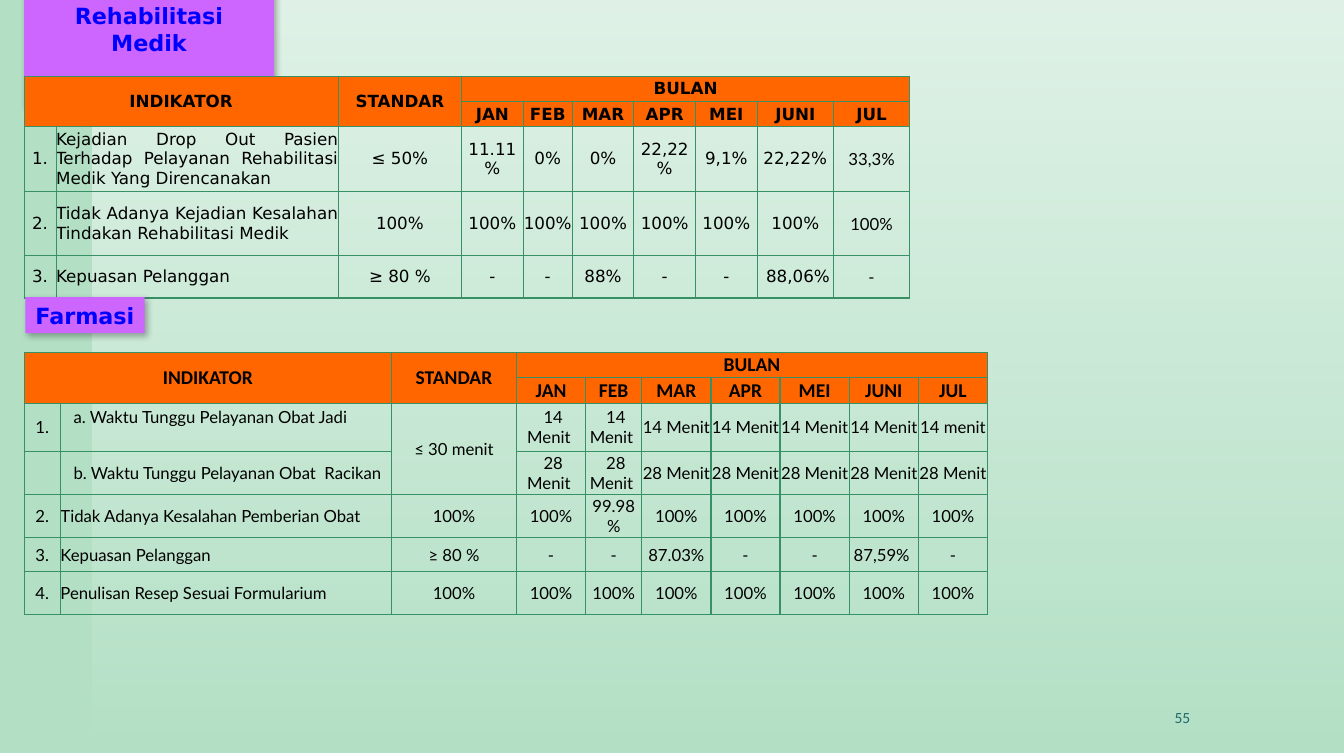
from dataclasses import dataclass

from pptx import Presentation
from pptx.dml.color import RGBColor
from pptx.enum.shapes import MSO_SHAPE
from pptx.enum.text import MSO_ANCHOR, MSO_AUTO_SIZE, PP_ALIGN
from pptx.oxml import parse_xml
from pptx.oxml.ns import nsdecls, qn
from pptx.util import Cm, Pt

RECTANGLE = MSO_SHAPE.RECTANGLE
MIDDLE = MSO_ANCHOR.MIDDLE
GROW = MSO_AUTO_SIZE.SHAPE_TO_FIT_TEXT
LEFT, CENTER, RIGHT, JUSTIFY = PP_ALIGN.LEFT, PP_ALIGN.CENTER, PP_ALIGN.RIGHT, PP_ALIGN.JUSTIFY


@dataclass(frozen=True)
class Theme:
    background: str = "B3E0C5"
    veil: str = "FFFFFF"
    label: str = "CC66FF"
    label_text: str = "0000FF"
    header: str = "FF6600"
    text: str = "000000"
    border: str = "389066"
    number: str = "1F696F"
    wide_font: str = "DejaVu Sans"
    header_font: str = "Calibri"
    body_font: str = "Lato"
    label_size: float = 16
    header_size: float = 14
    body_size: float = 12
    number_size: float = 11.1


THEME = Theme()
MONTHS = ["JAN", "FEB", "MAR", "APR", "MEI", "JUNI", "JUL"]
HEADER = [
    ["INDIKATOR", "", "STANDAR", "BULAN"] + [""] * 6,
    ["", "", ""] + MONTHS,
]
ALL_MET = ["100%"] * 7

REHABILITATION = [
    ["1.", "Kejadian Drop Out Pasien Terhadap Pelayanan Rehabilitasi Medik Yang Direncanakan",
     "≤ 50%", "11.11%", "0%", "0%", "22,22%", "9,1%", "22,22%", "33,3%"],
    ["2.", "Tidak Adanya Kejadian Kesalahan Tindakan Rehabilitasi Medik", "100%"] + ALL_MET,
    ["3.", "Kepuasan Pelanggan", "≥ 80 %", "-", "-", "88%", "-", "-", " 88,06%", "-"],
]
PHARMACY = [
    ["1.", "a. Waktu Tunggu Pelayanan Obat Jadi", "≤ 30 menit"]
    + [" 14 Menit "] * 2 + ["14 Menit"] * 4 + ["14 menit"],
    ["", "b. Waktu Tunggu Pelayanan Obat  Racikan", ""] + [" 28 Menit "] * 2 + ["28 Menit"] * 5,
    ["2.", "Tidak Adanya Kesalahan Pemberian Obat", "100%", "100%", "99.98%"] + ["100%"] * 5,
    ["3.", "Kepuasan Pelanggan", "≥ 80 %", "-", "-", "87.03%", "-", "-", "87,59% ", "-"],
    ["4.", "Penulisan Resep Sesuai Formularium", "100%"] + ALL_MET,
]


def color(value):
    return RGBColor.from_string(value)


def place(shape, left, top, width, height):
    shape.left, shape.top, shape.width, shape.height = Cm(left), Cm(top), Cm(width), Cm(height)


def write(frame, text, font, size, ink, bold=False, align=CENTER):
    frame.text = text
    para = frame.paragraphs[0]
    para.alignment = align
    for span in para.runs:
        span.font.name, span.font.size, span.font.bold = font, Pt(size), bold
        span.font.color.rgb = color(ink)


def add_veil(slide, left, top, width, height):
    """White gradient that fades out downwards, behind everything else."""
    veil = slide.shapes.add_shape(RECTANGLE, Cm(left), Cm(top), Cm(width), Cm(height))
    veil.shadow.inherit = False
    veil.line.fill.background()
    veil.fill.background()
    stops = "".join(
        f'<a:gs pos="{position}"><a:srgbClr val="{THEME.veil}"><a:alpha val="{alpha}"/></a:srgbClr></a:gs>'
        for position, alpha in ((0, 60000), (100000, 0)))
    gradient = parse_xml(f'<a:gradFill {nsdecls("a")}><a:gsLst>{stops}</a:gsLst>'
                         '<a:lin ang="5400000" scaled="0"/></a:gradFill>')
    properties = veil._element.spPr
    properties.replace(properties.find(qn("a:noFill")), gradient)
    slide.shapes._spTree.insert(2, veil._element)


def format_label(label, text, left, top, width, height):
    """Purple section label with a soft shadow."""
    place(label, left, top, width, height)
    label.fill.solid()
    label.fill.fore_color.rgb = color(THEME.label)
    label.line.fill.background()
    label.shadow.inherit = False
    label._element.spPr.find(qn("a:effectLst")).append(parse_xml(
        f'<a:outerShdw {nsdecls("a")} blurRad="{Pt(4.5)}" dist="{Pt(2.6)}" dir="{53 * 60000}" '
        'algn="ctr" rotWithShape="0"><a:srgbClr val="000000"><a:alpha val="30000"/></a:srgbClr>'
        '</a:outerShdw>'))
    frame = label.text_frame
    frame.margin_left = frame.margin_right = Cm(0.23)
    frame.margin_top = frame.margin_bottom = Cm(0.1)
    frame.vertical_anchor = MIDDLE
    frame.word_wrap = False
    frame.auto_size = GROW
    write(frame, text, THEME.wide_font, THEME.label_size, THEME.label_text, bold=True)


def format_cell(cell, fill=None):
    cell.margin_left = cell.margin_right = cell.margin_top = cell.margin_bottom = 0
    cell.vertical_anchor = MIDDLE
    if fill:
        cell.fill.solid()
        cell.fill.fore_color.rgb = color(fill)
    else:
        cell.fill.background()
    properties = cell._tc.get_or_add_tcPr()
    for index, side in enumerate(("lnL", "lnR", "lnT", "lnB")):
        properties.insert(index, parse_xml(
            f'<a:{side} {nsdecls("a")} w="{Pt(1)}"><a:solidFill><a:srgbClr val="{THEME.border}"/>'
            f'</a:solidFill></a:{side}>'))


def add_indicator_table(slide, left, top, widths, heights, body, header_type, body_fonts, name_align):
    """Indicator table: two header rows, then one row per indicator."""
    rows = HEADER + body
    table = slide.shapes.add_table(len(rows), len(widths), Cm(left), Cm(top),
                                   Cm(sum(widths)), Cm(sum(heights))).table
    table.first_row = table.horz_banding = False
    for column, width in zip(table.columns, widths):
        column.width = Cm(width)
    for row, height in zip(table.rows, heights):
        row.height = Cm(height)
    for row_index, values in enumerate(rows):
        in_header = row_index < len(HEADER)
        for column_index, text in enumerate(values):
            cell = table.cell(row_index, column_index)
            format_cell(cell, THEME.header if in_header else None)
            font, size = header_type if in_header else (body_fonts[column_index], THEME.body_size)
            align = name_align if column_index == 1 and not in_header else CENTER
            write(cell.text_frame, text, font, size, THEME.text, in_header, align)
    # Header spans
    for first, last in (((0, 0), (1, 1)), ((0, 2), (1, 2)), ((0, 3), (0, 9))):
        table.cell(*first).merge(table.cell(*last))
    return table


def add_slide_number(slide, text, left, top, width, height):
    box = slide.shapes.add_textbox(Cm(left), Cm(top), Cm(width), Cm(height))
    box.text_frame.word_wrap = True
    box.text_frame.vertical_anchor = MIDDLE
    write(box.text_frame, text, THEME.header_font, THEME.number_size, THEME.number, align=RIGHT)


def main():
    deck = Presentation()
    deck.slide_width, deck.slide_height = Cm(34.01), Cm(19.05)
    slide = deck.slides.add_slide(deck.slide_layouts[5])
    slide.background.fill.solid()
    slide.background.fill.fore_color.rgb = color(THEME.background)
    add_veil(slide, 2.34, 0, 31.67, 19.05)
    add_slide_number(slide, "55", 22.45, 17.65, 7.92, 1.02)

    # Medical rehabilitation
    format_label(slide.shapes.title, "Rehabilitasi Medik", 0.61, 0.28, 6.32, 0.91)
    add_indicator_table(
        slide, 0.61, 1.93,
        [0.81, 7.14, 3.12, 1.56, 1.24, 1.56, 1.56, 1.56, 1.93, 1.93],
        [0.64, 0.64, 1.63, 1.63, 1.07],
        REHABILITATION, (THEME.wide_font, THEME.body_size),
        [THEME.wide_font] * 9 + [THEME.body_font], JUSTIFY)

    # Pharmacy
    pharmacy = add_indicator_table(
        slide, 0.61, 8.92,
        [0.92, 8.38, 3.16, 1.75, 1.42] + [1.75] * 5,
        [0.64, 0.64, 1.22, 1.09, 1.09, 0.86, 1.09],
        PHARMACY, (THEME.header_font, THEME.header_size),
        [THEME.body_font] * 10, LEFT)
    pharmacy.cell(2, 2).merge(pharmacy.cell(3, 2))
    for row_index in (2, 3):
        pharmacy.cell(row_index, 1).margin_left = Cm(0.33)
    pharmacy.cell(2, 1).margin_bottom = Cm(0.5)
    label = slide.shapes.add_shape(RECTANGLE, 0, 0, 0, 0)
    format_label(label, "Farmasi", 0.64, 7.52, 3.02, 0.91)

    deck.save("out.pptx")


if __name__ == "__main__":
    main()
